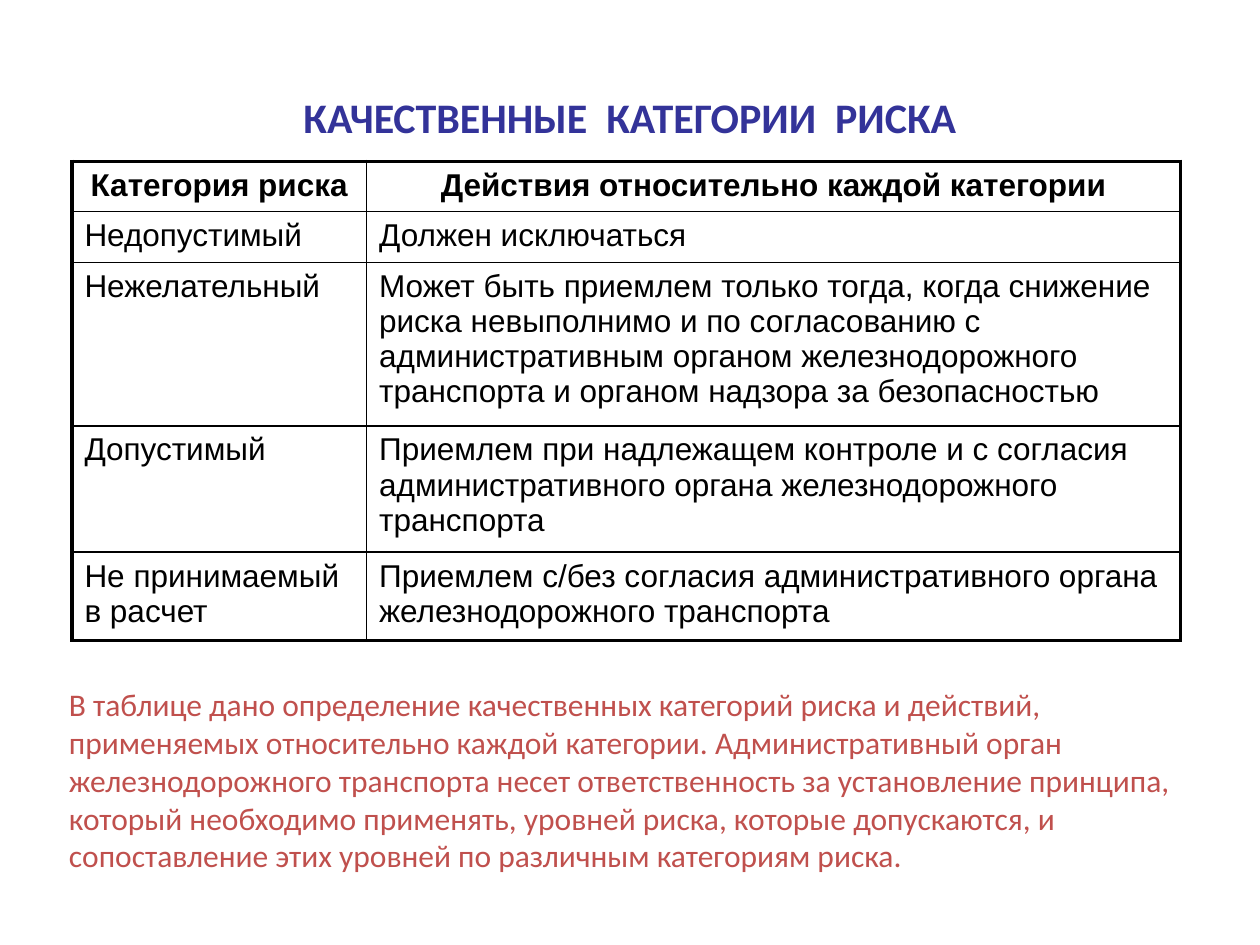
import pptx
import pptx.util
import pptx.dml.color
import pptx.enum.text
import pptx.oxml.ns
import lxml.etree

Cm = pptx.util.Cm
Pt = pptx.util.Pt
align = pptx.enum.text.PP_ALIGN


def tint(code):
    return pptx.dml.color.RGBColor.from_string(code)


def write(frame, text, side, color, form):
    frame.word_wrap = True
    frame.vertical_anchor = pptx.enum.text.MSO_ANCHOR.TOP
    para = frame.paragraphs[0]
    para.alignment = side
    run = para.add_run()
    run.text = text
    for key, value in form.items():
        setattr(run.font, key, value)
    run.font.color.rgb = tint(color)


deck = pptx.Presentation()
deck.slide_width, deck.slide_height = Cm(25.4), Cm(19.05)
slide = deck.slides.add_slide(deck.slide_layouts[6])

title = {"name": "Calibri", "size": Pt(24), "bold": True}
head = {"name": "Arial", "size": Pt(18), "bold": True}
body = {"name": "Arial", "size": Pt(18), "bold": False}
note = {"name": "Calibri", "size": Pt(18), "bold": False}

box = slide.shapes.add_textbox(Cm(1.27), Cm(1.73), Cm(22.86), Cm(2.31))
write(box.text_frame, "КАЧЕСТВЕННЫЕ  КАТЕГОРИИ  РИСКА", align.CENTER, "333399", title)

rows = [
    (0.97, "Категория риска", "Действия относительно каждой категории"),
    (1.02, "Недопустимый", "Должен исключаться"),
    (3.09, "Нежелательный",
     "Может быть приемлем только тогда, когда снижение риска невыполнимо и по "
     "согласованию с административным органом железнодорожного транспорта и "
     "органом надзора за безопасностью"),
    (2.4, "Допустимый",
     "Приемлем при надлежащем контроле и с согласия административного органа "
     "железнодорожного транспорта"),
    (1.68, "Не принимаемый в расчет",
     "Приемлем с/без согласия административного органа железнодорожного транспорта"),
]
wide = [5.94, 16.41]
high = [row[0] for row in rows]
grid = slide.shapes.add_table(
    len(rows), len(wide), Cm(1.45), Cm(3.25), Cm(sum(wide)), Cm(sum(high))
).table
for key in ("first_row", "horz_banding"):
    setattr(grid, key, False)
for col, size in zip(grid.columns, wide):
    col.width = Cm(size)

for r, (size, *texts) in enumerate(rows):
    grid.rows[r].height = Cm(size)
    for c, text in enumerate(texts):
        cell = grid.cell(r, c)
        side, form = (align.CENTER, head) if r == 0 else (align.LEFT, body)
        write(cell.text_frame, text, side, "000000", form)
        props = cell._tc.get_or_add_tcPr()
        edges = {"L": c == 0, "R": c == len(wide) - 1,
                 "T": r == 0, "B": r == len(rows) - 1}
        for edge, outer in edges.items():
            line = lxml.etree.SubElement(
                props, pptx.oxml.ns.qn("a:ln" + edge), w=str(Pt(2.25 if outer else 1)))
            fill = lxml.etree.SubElement(line, pptx.oxml.ns.qn("a:solidFill"))
            lxml.etree.SubElement(fill, pptx.oxml.ns.qn("a:srgbClr"), val="000000")
        cell.fill.background()

box = slide.shapes.add_textbox(Cm(1.14), Cm(13.69), Cm(23.55), Cm(4.11))
write(
    box.text_frame,
    "В таблице дано определение качественных категорий риска и действий, "
    "применяемых относительно каждой категории. Административный орган "
    "железнодорожного транспорта несет ответственность за установление принципа, "
    "который необходимо применять, уровней риска, которые допускаются, и "
    "сопоставление этих уровней по различным категориям риска.",
    align.LEFT, "C0504D", note)
box.text_frame.auto_size = pptx.enum.text.MSO_AUTO_SIZE.SHAPE_TO_FIT_TEXT

deck.save("out.pptx")
